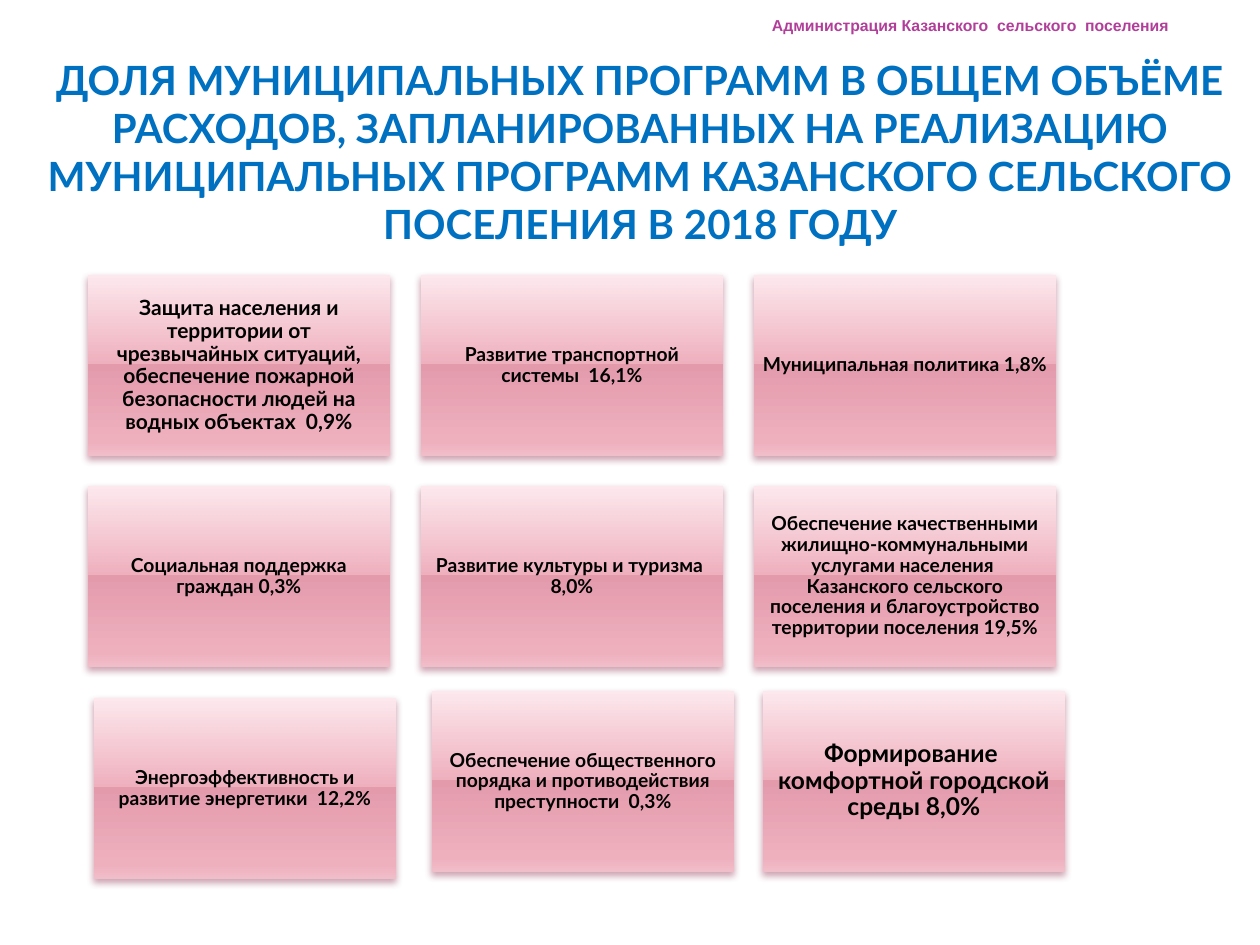
from lxml import etree
from pptx import Presentation
from pptx.dml.color import RGBColor
from pptx.enum.shapes import MSO_SHAPE as Shape
from pptx.enum.text import MSO_ANCHOR as Anchor, PP_ALIGN as Align
from pptx.oxml import parse_xml
from pptx.oxml.ns import nsdecls
from pptx.util import Pt

PX = 914400 / 126


def color(value):
    return RGBColor.from_string(value)


def write(box, text, size, ink, font="Lato", inset=(6, 6), frame=None, para=None):
    """Put one bold paragraph in a box; inset is (side, top and bottom) in px."""
    side, edge = (round(n * PX) for n in inset)
    frame_format = {"word_wrap": True, "vertical_anchor": Anchor.MIDDLE,
                    "margin_left": side, "margin_right": side,
                    "margin_top": edge, "margin_bottom": edge} | (frame or {})
    for name, value in frame_format.items():
        setattr(box.text_frame, name, value)
    paragraph = box.text_frame.paragraphs[0]
    for name, value in ({"alignment": Align.CENTER} | (para or {})).items():
        setattr(paragraph, name, value)
    span = paragraph.add_run()
    span.text = text
    for name, value in {"name": font, "size": Pt(size), "bold": True}.items():
        setattr(span.font, name, value)
    span.font.color.rgb = color(ink)


deck = Presentation()
deck.slide_width, deck.slide_height = round(1260 * PX), round(945 * PX)
page = deck.slides.add_slide(deck.slide_layouts[6])

title = page.shapes.add_textbox(*(round(n * PX) for n in (35, 101, 1211, 147)))
write(title, "ДОЛЯ МУНИЦИПАЛЬНЫХ ПРОГРАММ В ОБЩЕМ ОБЪЁМЕ РАСХОДОВ, "
      "ЗАПЛАНИРОВАННЫХ НА РЕАЛИЗАЦИЮ МУНИЦИПАЛЬНЫХ ПРОГРАММ КАЗАНСКОГО "
      "СЕЛЬСКОГО ПОСЕЛЕНИЯ В 2018 ГОДУ",
      23, "0070C0", inset=(6, 0), frame={"vertical_anchor": Anchor.BOTTOM})

# Programme cards
CARD_WIDTH, CARD_HEIGHT = 302, 181
GRADIENT = [(0, "FCE8ED"), (49, "EFB0BE"), (49, "E39BAC"), (92, "EFB0BE"), (100, "F0BEC9")]
stops = "".join(f'<a:gs pos="{at * 1000}"><a:srgbClr val="{tone}"/></a:gs>'
                for at, tone in GRADIENT)
fill_xml = (f'<a:gradFill {nsdecls("a")} rotWithShape="1"><a:gsLst>{stops}</a:gsLst>'
            '<a:lin ang="5400000" scaled="0"/></a:gradFill>')
shadow_xml = (f'<a:outerShdw {nsdecls("a")} blurRad="{Pt(4)}" dist="{Pt(2)}" dir="5400000" '
              'rotWithShape="0"><a:srgbClr val="7F1238"><a:alpha val="38000"/>'
              '</a:srgbClr></a:outerShdw>')

upper_rows = [
    ("Защита населения и территории от чрезвычайных ситуаций, обеспечение "
     "пожарной безопасности людей на водных объектах  0,9%", 12),
    ("Развитие транспортной системы  16,1%", 11),
    ("Муниципальная политика 1,8%", 11),
    ("Социальная поддержка граждан 0,3%", 11),
    ("Развитие культуры и туризма  8,0%", 11),
    ("Обеспечение качественными жилищно-коммунальными услугами населения  "
     "Казанского сельского поселения и благоустройство территории поселения 19,5%", 11),
]
cards = [(88 + 333 * (i % 3), 275 + 211 * (i // 3), text, size)
         for i, (text, size) in enumerate(upper_rows)]
cards += [
    (94, 698, "Энергоэффективность и развитие энергетики  12,2%", 11),
    (432, 691, "Обеспечение общественного порядка и противодействия "
     "преступности  0,3%", 11),
    (763, 691, "Формирование  комфортной городской среды 8,0%", 14),
]

for left, top, text, size in cards:
    card = page.shapes.add_shape(
        Shape.RECTANGLE, *(round(n * PX) for n in (left, top, CARD_WIDTH, CARD_HEIGHT)))
    card.shadow.inherit = False
    card.line.fill.background()
    properties = card.element.spPr
    properties.insert_element_before(parse_xml(fill_xml), "a:ln", "a:effectLst")
    properties.find("{*}effectLst").append(etree.fromstring(shadow_xml))
    write(card, text, size, "000000", para={"line_spacing": 0.9})

header = page.shapes.add_textbox(*(round(n * PX) for n in (759, 10, 426, 32)))
write(header, "Администрация Казанского  сельского  поселения", 9, "B13F9A",
      font="Arial", inset=(13, 6),
      frame={"word_wrap": False, "vertical_anchor": Anchor.TOP},
      para={"alignment": Align.LEFT})

deck.save("out.pptx")
